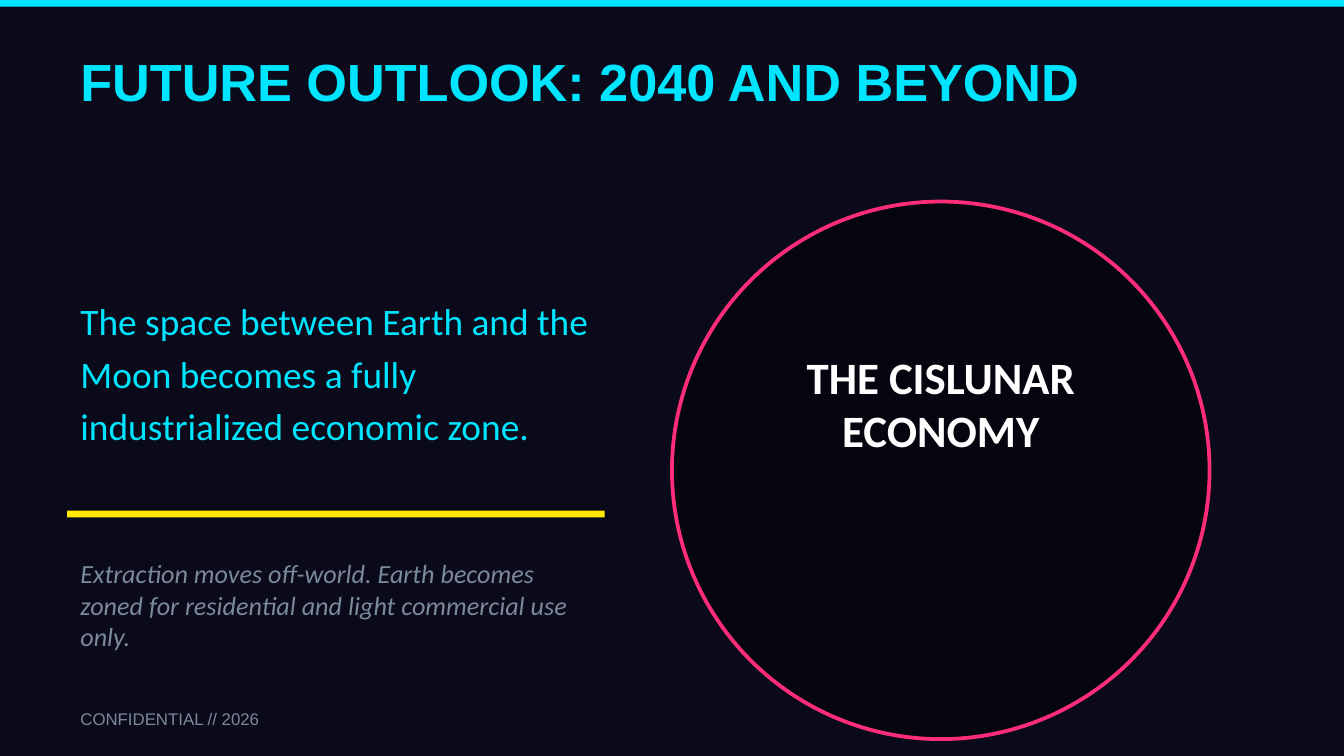
"""Build the future outlook slide on the cislunar economy."""
from pptx import Presentation
from pptx.dml.color import RGBColor
from pptx.enum.shapes import MSO_SHAPE
from pptx.enum.text import MSO_ANCHOR, PP_ALIGN
from pptx.util import Inches, Pt

RECTANGLE, OVAL = MSO_SHAPE.RECTANGLE, MSO_SHAPE.OVAL
MIDDLE = MSO_ANCHOR.MIDDLE
LEFT, CENTER = PP_ALIGN.LEFT, PP_ALIGN.CENTER

SLIDE_WIDTH = Inches(10)
SLIDE_HEIGHT = SLIDE_WIDTH * 9 // 16

COLORS = {
    "night": "0A0A1A",
    "orbit": "050510",
    "cyan": "00E5FF",
    "pink": "FF2D78",
    "yellow": "FFEA00",
    "white": "FFFFFF",
    "gray": "7A8A9A",
}

SHAPES = [
    (RECTANGLE, (0, 0, 10, 0.05), "cyan", None),
    (OVAL, (5, 1.5, 4, 4), "orbit", "pink"),
    (RECTANGLE, (0.5, 3.8, 4, 0.05), "yellow", None),
]

TEXTS = [
    (["FUTURE OUTLOOK: 2040 AND BEYOND"], (0.5, 0.3, 9, 0.6), "cyan",
     {"name": "Arial", "size": Pt(28), "bold": True}, {"alignment": LEFT}),
    (["THE CISLUNAR", "ECONOMY"], (5, 2.5, 4, 1), "white",
     {"name": "Calibri", "size": Pt(24), "bold": True}, {"alignment": CENTER}),
    (["The space between Earth and the Moon becomes a fully industrialized economic zone."],
     (0.5, 2, 4, 1.5), "cyan",
     {"name": "Calibri", "size": Pt(20)}, {"alignment": LEFT, "line_spacing": Pt(28)}),
    (["Extraction moves off-world. Earth becomes zoned for residential and light commercial use only."],
     (0.5, 4, 4, 1), "gray",
     {"name": "Calibri", "size": Pt(14), "italic": True}, {"alignment": LEFT}),
    (["CONFIDENTIAL // 2026"], (0.5, 5.2, 5, 0.3), "gray",
     {"name": "Arial", "size": Pt(9)}, {"alignment": LEFT}),
]


def color(name):
    return RGBColor.from_string(COLORS[name])


def apply(target, values):
    for attribute, value in values.items():
        setattr(target, attribute, value)


def add_shape(slide, kind, box, fill, line):
    shape = slide.shapes.add_shape(kind, *map(Inches, box))
    shape.shadow.inherit = False
    shape.fill.solid()
    shape.fill.fore_color.rgb = color(fill)
    if line:
        shape.line.color.rgb = color(line)
        shape.line.width = Pt(2)
    else:
        shape.line.fill.background()


def add_text(slide, lines, box, font_color, font_format, paragraph_format):
    frame = slide.shapes.add_textbox(*map(Inches, box)).text_frame
    apply(frame, {"word_wrap": True, "vertical_anchor": MIDDLE, "text": "\n".join(lines)})
    for paragraph in frame.paragraphs:
        apply(paragraph, paragraph_format)
        apply(paragraph.font, font_format)
        paragraph.font.color.rgb = color(font_color)


def main():
    presentation = Presentation()
    apply(presentation, {"slide_width": SLIDE_WIDTH, "slide_height": SLIDE_HEIGHT})
    slide = presentation.slides.add_slide(presentation.slide_layouts[6])
    slide.background.fill.solid()
    slide.background.fill.fore_color.rgb = color("night")
    for item in SHAPES:
        add_shape(slide, *item)
    for item in TEXTS:
        add_text(slide, *item)
    presentation.save("out.pptx")


if __name__ == "__main__":
    main()
